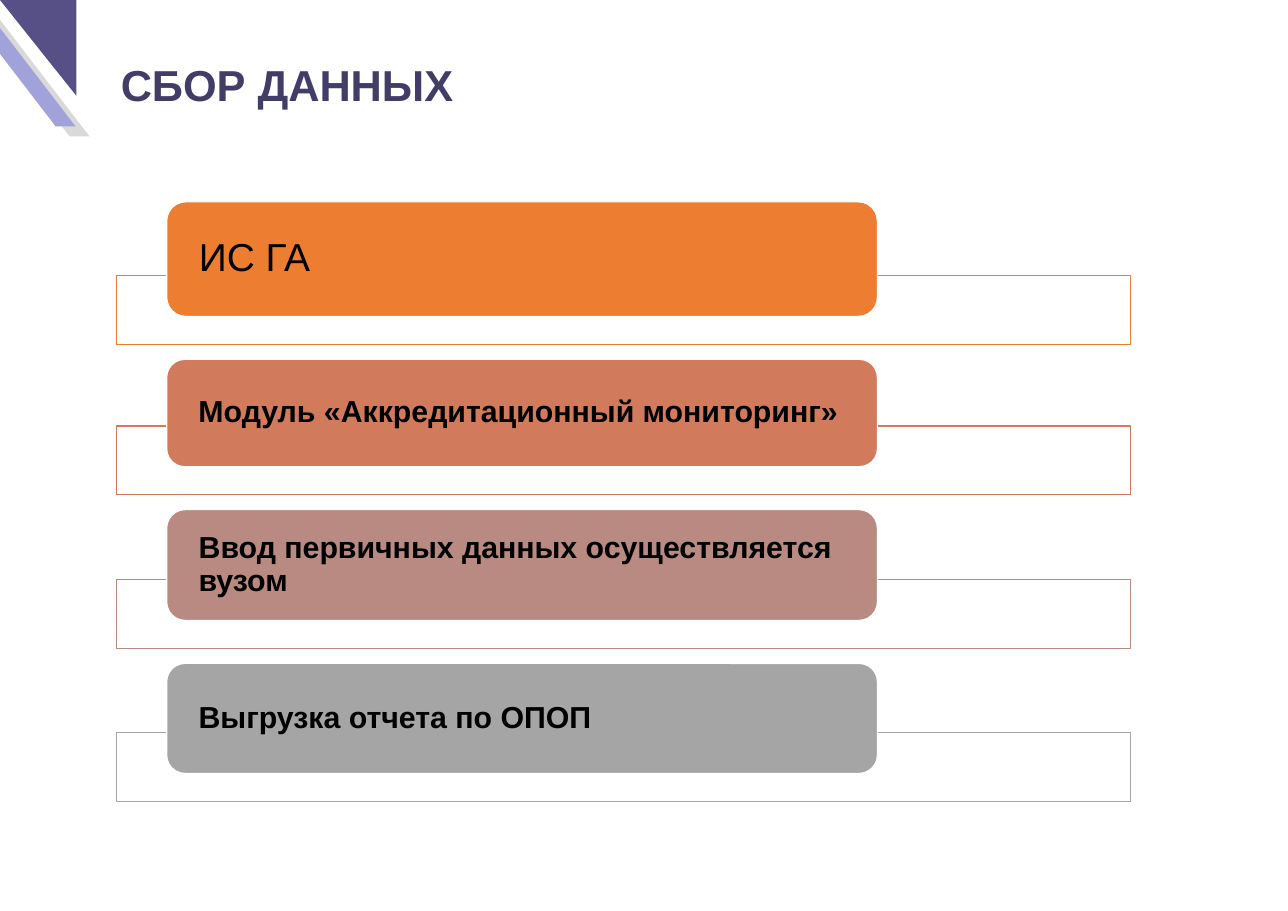
from pptx import Presentation
from pptx.dml.color import RGBColor
from pptx.enum.shapes import MSO_SHAPE
from pptx.enum.text import MSO_ANCHOR, PP_ALIGN
from pptx.util import Inches, Pt

WHITE = RGBColor(0xFF, 0xFF, 0xFF)
BLACK = RGBColor(0x00, 0x00, 0x00)
INDIGO = RGBColor(0x42, 0x3D, 0x67)
VIOLET = RGBColor(0x56, 0x50, 0x87)
LILAC = RGBColor(0xA2, 0xA2, 0xDA)
LIGHT_GREY = RGBColor(0xD9, 0xD9, 0xD9)
ORANGE = RGBColor(0xED, 0x7D, 0x31)
TERRACOTTA = RGBColor(0xD1, 0x7B, 0x5C)
DUSTY_ROSE = RGBColor(0xB9, 0x8A, 0x82)
GREY = RGBColor(0xA5, 0xA5, 0xA5)

deck = Presentation()
deck.slide_width, deck.slide_height = Inches(16.53), Inches(11.69)
page = deck.slides.add_slide(deck.slide_layouts[6])


def add_box(kind, left, top, width, height, fill, line=None):
    """Add a shape placed in percent of the slide's width and height."""
    across, down = deck.slide_width / 100, deck.slide_height / 100
    box = page.shapes.add_shape(kind, int(left * across), int(top * down),
                                int(width * across), int(height * down))
    box.shadow.inherit = False
    if fill is None:
        box.fill.background()
    else:
        box.fill.solid()
        box.fill.fore_color.rgb = fill
    if line is None:
        box.line.fill.background()
    else:
        box.line.color.rgb = line
        box.line.width = Pt(1)
    return box


def write_text(box, text, size, color, bold):
    box.text_frame.word_wrap = True
    para = box.text_frame.paragraphs[0]
    para.alignment = PP_ALIGN.LEFT
    span = para.add_run()
    span.text = text
    span.font.name = "Arial"
    span.font.size = Pt(size)
    span.font.bold = bold
    span.font.color.rgb = color
    return para


# Corner ornament
for left, top, color in [(-2.12, 1.11, LIGHT_GREY), (-3.21, 0, LILAC)]:
    stripe = add_box(MSO_SHAPE.PARALLELOGRAM, left, top, 9.07, 13.86, color)
    stripe.adjustments[0] = 0.83
    stripe._element.spPr.xfrm.set("flipH", "1")
corner = add_box(MSO_SHAPE.RIGHT_TRIANGLE, 0, 0, 5.93, 10.52, VIOLET)
corner.rotation = 180

# Steps: each label overlaps the bar below it
BAR_HEIGHT, OVERLAP, GAP = 7.53, 4.45, 1.65
steps = [
    ("ИС ГА", 12.57, ORANGE, 36, False),
    ("Модуль «Аккредитационный мониторинг»", 11.76, TERRACOTTA, 28, True),
    ("Ввод первичных данных осуществляется вузом", 12.15, DUSTY_ROSE, 28, True),
    ("Выгрузка отчета по ОПОП", 12.06, GREY, 28, True),
]
label_top = 22.16
for text, label_height, color, size, bold in steps:
    bar_top = label_top + label_height - OVERLAP
    add_box(MSO_SHAPE.RECTANGLE, 9.01, bar_top, 78.77, BAR_HEIGHT, WHITE, color)
    label = add_box(MSO_SHAPE.ROUNDED_RECTANGLE, 12.95, label_top, 55.17,
                    label_height, color, WHITE)
    frame = label.text_frame
    frame.vertical_anchor = MSO_ANCHOR.MIDDLE
    frame.margin_left = frame.margin_right = Inches(0.34)
    frame.margin_top = frame.margin_bottom = 0
    write_text(label, text, size, BLACK, bold).line_spacing = 0.9
    label_top = bar_top + BAR_HEIGHT + GAP

# Title
title = page.shapes.add_textbox(
    int(deck.slide_width * 0.0938), int(deck.slide_height * 0.06),
    int(deck.slide_width * 0.7846), int(deck.slide_height * 0.0659))
title.text_frame.margin_left = 0
write_text(title, "СБОР ДАННЫХ", 40, INDIGO, True)

deck.save("out.pptx")
